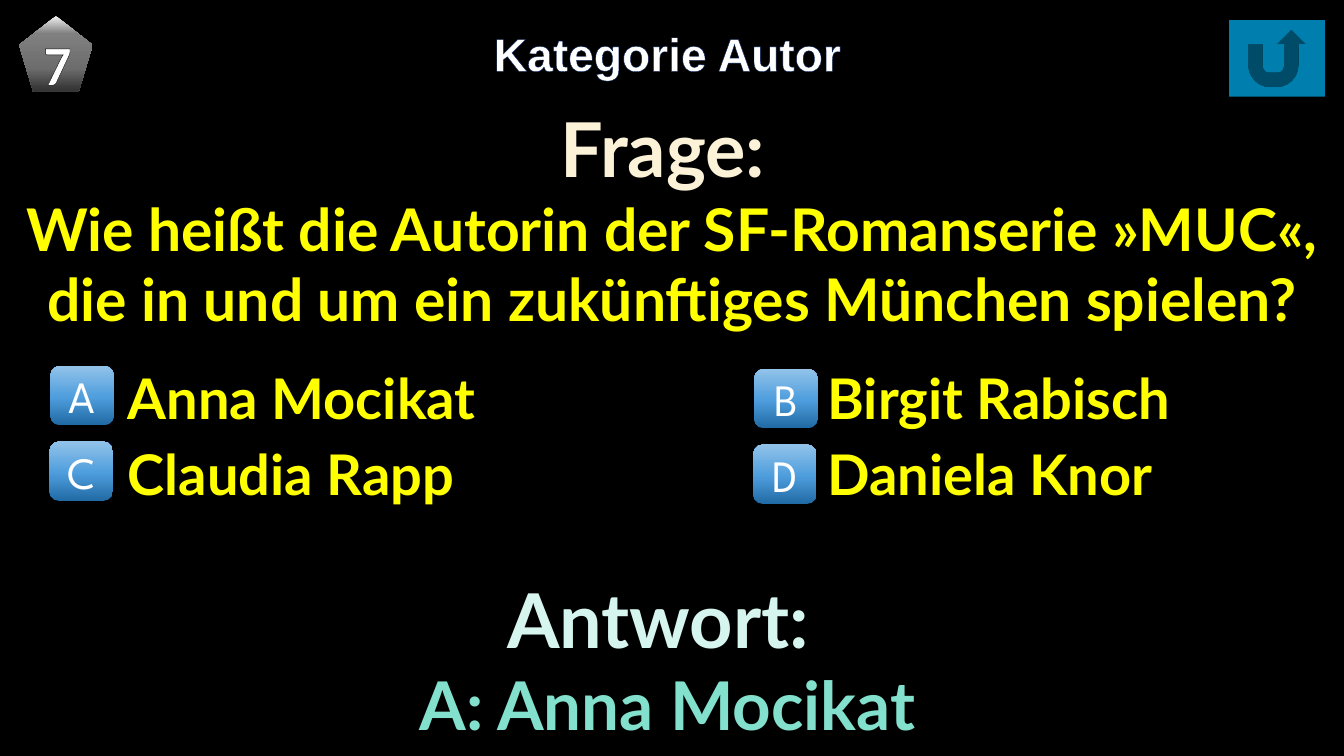
import pptx
import pptx.dml.color
import pptx.enum.shapes
import pptx.enum.text
import pptx.oxml
import pptx.oxml.ns
import pptx.util

PX = 9144
SHAPE = pptx.enum.shapes.MSO_SHAPE
ALIGN = pptx.enum.text.PP_ALIGN
ANCHOR = pptx.enum.text.MSO_ANCHOR

HEADING = {"name": "Lato", "size": 54, "bold": True}
YELLOW = "FFFF00"
LETTER = {"name": "League Spartan", "size": 32}
OPTION = {"name": "Lato", "size": 40, "bold": True}
OPTION_BLUE = [(0, "206AA5"), (48, "4F9EDD"), (100, "92C3EA")]
BADGE_GREY = [(0, "F2F2F2"), (23, "808080"), (69, "6D6D6D"), (97, "363636")]


def rgb(color):
    """Return the colour for a hex string."""
    return pptx.dml.color.RGBColor.from_string(color)


def xml(body):
    """Return an element built from drawing markup."""
    tag, rest = body.split(" ", 1)
    return pptx.oxml.parse_xml(f"<{tag} {pptx.oxml.ns.nsdecls('a')} {rest}")


def box(left, top, width, height):
    """Return a place on the slide in EMU."""
    return [length * PX for length in (left, top, width, height)]


def write(paragraph, text, font, color, align=ALIGN.CENTER, outline=None):
    """Fill one paragraph with a formatted run."""
    paragraph.alignment = align
    run = paragraph.add_run()
    run.text = text
    for attribute, value in font.items():
        setattr(run.font, attribute, pptx.util.Pt(value) if attribute == "size" else value)
    run.font.color.rgb = rgb(color)
    if outline:
        line_color, width = outline
        run.font._element.insert(0, xml(
            f'a:ln w="{pptx.util.Pt(width)}"><a:solidFill>'
            f'<a:srgbClr val="{line_color}"/></a:solidFill></a:ln>'))


def add_text(slide, place, lines, space_after=None, **style):
    """Add a wrapping text box with one paragraph per line."""
    frame = slide.shapes.add_textbox(*box(*place)).text_frame
    frame.word_wrap = True
    for number, (text, font, color) in enumerate(lines):
        paragraph = frame.add_paragraph() if number else frame.paragraphs[0]
        if space_after is not None:
            paragraph.space_after = pptx.util.Pt(space_after)
        write(paragraph, text, font, color, **style)


def add_plain_shape(slide, kind, place):
    """Add a preset shape without line or shadow."""
    shape = slide.shapes.add_shape(kind, *box(*place))
    shape.shadow.inherit = False
    shape.line.fill.background()
    return shape


def add_badge(slide, kind, place, stops, angle, text, font, **style):
    """Add a gradient shape with a centred white character."""
    badge = add_plain_shape(slide, kind, place)
    marks = "".join(f'<a:gs pos="{position * 1000}"><a:srgbClr val="{color}"/></a:gs>'
                    for position, color in stops)
    geometry = badge._element.spPr.find(pptx.oxml.ns.qn("a:prstGeom"))
    geometry.addnext(xml(f'a:gradFill rotWithShape="1"><a:gsLst>{marks}</a:gsLst>'
                         f'<a:lin ang="{angle * 60000}" scaled="0"/></a:gradFill>'))
    badge.text_frame.vertical_anchor = ANCHOR.MIDDLE
    write(badge.text_frame.paragraphs[0], text, font, "FFFFFF", **style)


def add_return_button(slide, place):
    """Add the translucent return button."""
    button = add_plain_shape(slide, SHAPE.ACTION_BUTTON_RETURN, place)
    button.fill.solid()
    button.fill.fore_color.rgb = rgb("00B0F0")
    color = button._element.spPr.find(".//" + pptx.oxml.ns.qn("a:srgbClr"))
    color.append(xml('a:alpha val="72000"/>'))


def add_options(slide, text_place, badge_left, badge_top, options):
    """Add one column of answer options with their letter badges."""
    add_text(slide, text_place, [(name, OPTION, YELLOW) for _, name in options],
             space_after=6, align=ALIGN.LEFT)
    for row, (letter, _) in enumerate(options):
        add_badge(slide, SHAPE.ROUNDED_RECTANGLE,
                  (badge_left - row, badge_top + 75 * row, 63, 59),
                  OPTION_BLUE, 270, letter, LETTER)


def main():
    """Build the quiz slide and save it."""
    quiz = pptx.Presentation()
    quiz.slide_width, quiz.slide_height = 1333 * PX, 750 * PX
    slide = quiz.slides.add_slide(quiz.slide_layouts[6])
    slide.background.fill.solid()
    slide.background.fill.fore_color.rgb = rgb("000000")

    add_text(slide, (27, 20, 1270, 66),
             [("Kategorie Autor", {"name": "Arial", "size": 33, "bold": True}, "FFFFFF")],
             outline=("002060", 0.52))
    add_text(slide, (0, 96, 1333, 242), [
        ("Frage: ", HEADING, "FBF2D7"),
        ("Wie heißt die Autorin der SF-Romanserie »MUC«, "
         "die in und um ein zukünftiges München spielen?", {**HEADING, "size": 42}, YELLOW)])
    add_text(slide, (27, 563, 1270, 182), [
        ("Antwort: ", HEADING, "D5F5EE"),
        ("A: Anna Mocikat", {**HEADING, "size": 48}, "82E0CD")])
    add_return_button(slide, (1219, 20, 95, 76))
    add_badge(slide, SHAPE.REGULAR_PENTAGON, (19, 16, 73, 75), BADGE_GREY, 90, "7",
              {"name": "Calibri", "size": 40, "bold": True}, outline=("000000", 1.06))
    add_options(slide, (117, 356, 611, 153), 50, 363,
                [("A", "Anna Mocikat"), ("C", "Claudia Rapp")])
    add_options(slide, (811, 356, 522, 153), 748, 366,
                [("B", "Birgit Rabisch"), ("D", "Daniela Knor")])
    quiz.save("out.pptx")


if __name__ == "__main__":
    main()
